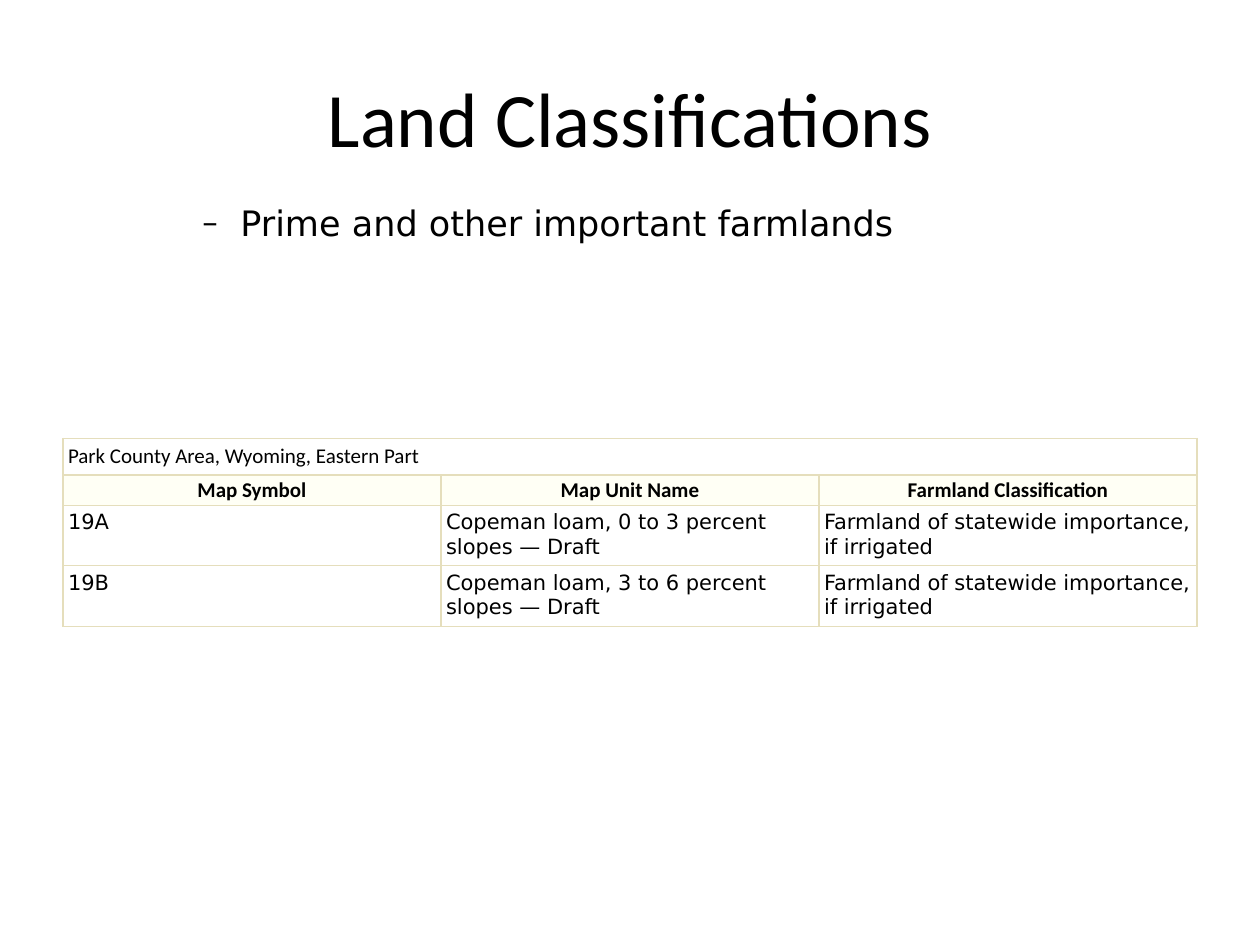
from dataclasses import dataclass

from lxml import etree
from pptx import Presentation
from pptx.dml.color import RGBColor
from pptx.enum.text import MSO_ANCHOR, PP_ALIGN
from pptx.oxml.ns import qn
from pptx.util import Inches, Pt

CENTER, LEFT = PP_ALIGN.CENTER, PP_ALIGN.LEFT
MIDDLE = MSO_ANCHOR.MIDDLE
TITLE_ONLY = 5


@dataclass(frozen=True)
class Theme:
    text: str = "000000"
    border: str = "E5DEBC"
    header_fill: str = "FFFFF5"
    body_fill: str = "FFFFFF"
    heading_font: str = "Calibri"
    body_font: str = "DejaVu Sans"
    title_size: int = 44
    bullet_size: int = 20
    table_size: int = 12
    border_width: float = 0.75


THEME = Theme()
AREA = "Park County Area, Wyoming, Eastern Part"
HEADINGS = ["Map Symbol", "Map Unit Name", "Farmland Classification"]
MAP_UNITS = [
    ["19A", "Copeman loam, 0 to 3 percent slopes — Draft",
     "Farmland of statewide importance, if irrigated"],
    ["19B", "Copeman loam, 3 to 6 percent slopes — Draft",
     "Farmland of statewide importance, if irrigated"],
]
ROW_HEIGHTS = [0.29, 0.24, 0.47, 0.48]
COLUMN_WIDTH = 3


def add_run(paragraph, text, font, size, bold=False):
    run = paragraph.add_run()
    run.text = text
    run.font.name = font
    run.font.size = Pt(size)
    run.font.bold = bold
    run.font.color.rgb = RGBColor.from_string(THEME.text)


def set_title(slide, text):
    title = slide.shapes.title
    title.left, title.top = Inches(0.5), Inches(0.3)
    title.width, title.height = Inches(9), Inches(1.25)
    title.text_frame.vertical_anchor = MIDDLE
    paragraph = title.text_frame.paragraphs[0]
    paragraph.alignment = CENTER
    add_run(paragraph, text, THEME.heading_font, THEME.title_size)


def add_dash_point(slide, text):
    box = slide.shapes.add_textbox(Inches(1), Inches(1.55), Inches(9), Inches(4.95))
    box.text_frame.word_wrap = True
    paragraph = box.text_frame.paragraphs[0]
    paragraph.level = 1
    paragraph.space_before = Pt(0.2 * THEME.bullet_size)
    properties = paragraph._p.get_or_add_pPr()
    properties.set("marL", str(Inches(0.81)))
    properties.set("indent", str(Inches(-0.31)))
    etree.SubElement(properties, qn("a:buFont"), typeface=THEME.heading_font)
    etree.SubElement(properties, qn("a:buChar"), char="–")
    add_run(paragraph, text, THEME.body_font, THEME.bullet_size)


def set_borders(cell):
    properties = cell._tc.get_or_add_tcPr()
    for position, side in enumerate(("a:lnL", "a:lnR", "a:lnT", "a:lnB")):
        line = etree.Element(qn(side), w=str(Pt(THEME.border_width)))
        fill = etree.SubElement(line, qn("a:solidFill"))
        etree.SubElement(fill, qn("a:srgbClr"), val=THEME.border)
        properties.insert(position, line)


def format_cell(cell, text, font, fill=None, margin=0.04, align=LEFT, bold=False):
    cell.margin_left = cell.margin_right = Inches(margin)
    cell.margin_top = cell.margin_bottom = Inches(margin)
    if fill:
        cell.fill.solid()
        cell.fill.fore_color.rgb = RGBColor.from_string(fill)
    else:
        cell.fill.background()
    set_borders(cell)
    if text:
        paragraph = cell.text_frame.paragraphs[0]
        paragraph.alignment = align
        add_run(paragraph, text, font, THEME.table_size, bold)


def add_farmland_table(slide):
    columns = len(HEADINGS)
    table = slide.shapes.add_table(
        len(ROW_HEIGHTS), columns, Inches(0.5), Inches(3.48),
        Inches(COLUMN_WIDTH * columns), Inches(sum(ROW_HEIGHTS))).table
    table.first_row = table.horz_banding = False
    for column in table.columns:
        column.width = Inches(COLUMN_WIDTH)
    for row, height in zip(table.rows, ROW_HEIGHTS):
        row.height = Inches(height)

    table.cell(0, 0).merge(table.cell(0, columns - 1))
    for index in range(columns):
        format_cell(table.cell(0, index), "" if index else AREA, THEME.heading_font)
    for index, heading in enumerate(HEADINGS):
        format_cell(table.cell(1, index), heading, THEME.heading_font,
                    THEME.header_fill, margin=0.02, align=CENTER, bold=True)
    for row_index, unit in enumerate(MAP_UNITS, start=2):
        for index, value in enumerate(unit):
            format_cell(table.cell(row_index, index), value, THEME.body_font,
                        THEME.body_fill)


def main():
    presentation = Presentation()
    presentation.slide_width, presentation.slide_height = Inches(10), Inches(7.5)
    slide = presentation.slides.add_slide(presentation.slide_layouts[TITLE_ONLY])
    set_title(slide, "Land Classifications")
    add_dash_point(slide, "Prime and other important farmlands")
    add_farmland_table(slide)
    presentation.save("out.pptx")


if __name__ == "__main__":
    main()
